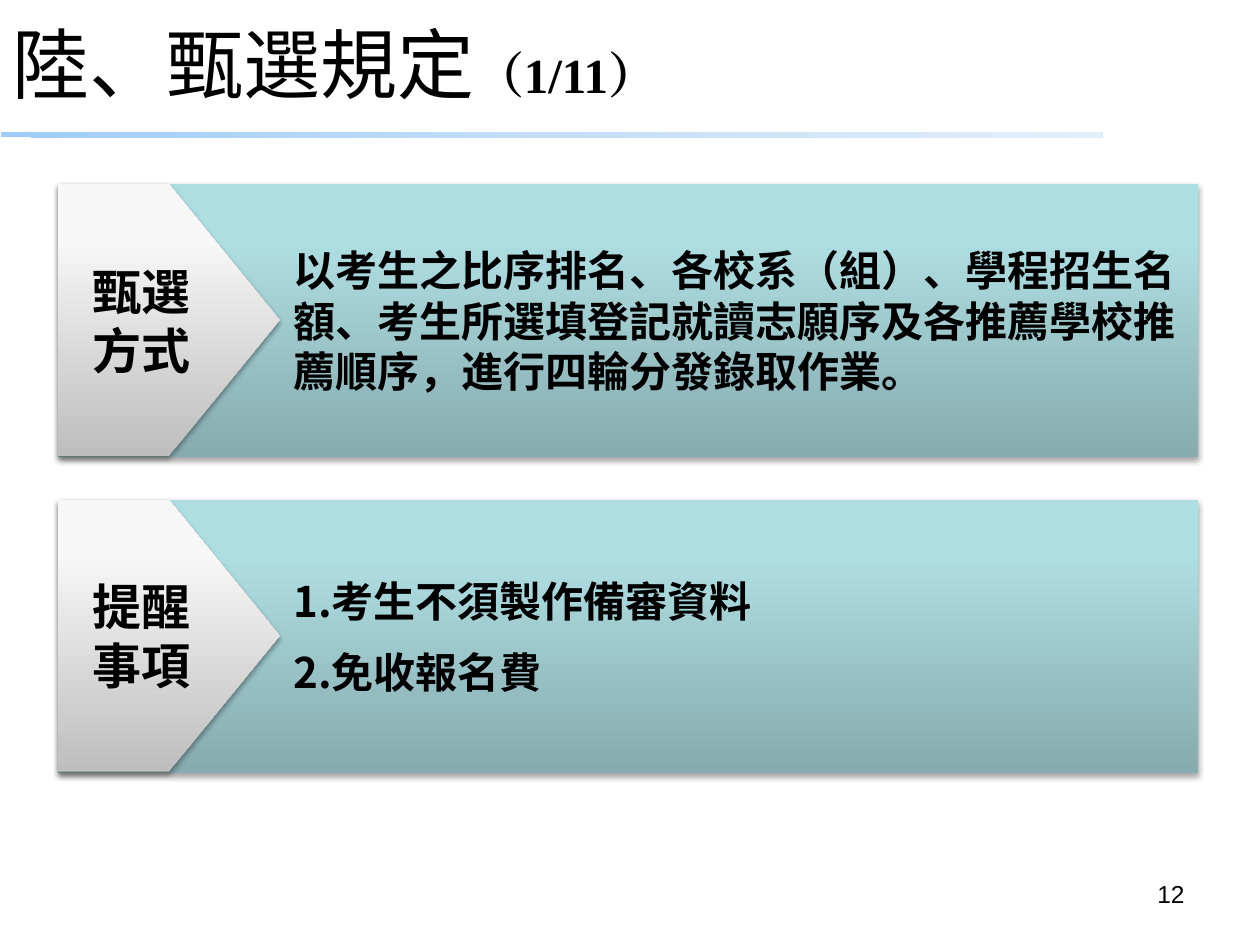
from copy import deepcopy
from dataclasses import dataclass
from lxml.etree import SubElement
from pptx import Presentation
from pptx.dml.color import RGBColor
from pptx.enum.shapes import MSO_SHAPE
from pptx.enum.text import MSO_ANCHOR, MSO_AUTO_SIZE, PP_ALIGN
from pptx.oxml.ns import qn
from pptx.util import Inches, Pt

WIDTH, HEIGHT = Inches(10), Inches(7.5)
SANS = "Noto Sans CJK SC"
TEAL = [(0, "87ABAE"), (0.8, "AFDEE2"), (1, "AFE0E4")]
GREY = [(0, "BEBEBE"), (0.8, "F7F7F7"), (1, "F8F8F8")]
BLUE = [(0, "9FCCF6"), (0.5, "C4DEF8"), (1, "E2EEFB")]


@dataclass
class Box:
    left: float
    top: float
    width: float
    height: float

    def place(self) -> tuple[int, ...]:
        sides = (WIDTH, HEIGHT, WIDTH, HEIGHT)
        shares = (self.left, self.top, self.width, self.height)
        return tuple(round(side * share / 100) for side, share in zip(sides, shares))


@dataclass
class Band:
    label: str
    lines: list[str]
    top: float
    gap: int


BANDS = [
    Band("甄選\v方式", ["以考生之比序排名、各校系（組）、學程招生名額、考生所選填登記就讀志願序及各推薦學校推薦順序，進行四輪分發錄取作業。"], 19.47, 0),
    Band("提醒事項", ["1.考生不須製作備審資料", "2.免收報名費"], 52.87, 6),
]


def tint(code: str) -> RGBColor:
    return RGBColor.from_string(code)


def apply(target, values: dict) -> None:
    for name, value in values.items():
        setattr(target, name, value)


def style(run, size: int, face: str, bold: bool = False) -> None:
    apply(run.font, {"size": Pt(size), "name": face, "bold": bold})
    run.font.color.rgb = tint("000000")
    SubElement(run._r.get_or_add_rPr(), qn("a:ea"), typeface=face)


def blend(shape, stops: list[tuple[float, str]], angle: int) -> None:
    shape.fill.gradient()
    shape.fill.gradient_angle = angle
    group = shape._element.spPr.find(".//" + qn("a:gsLst"))
    group.append(deepcopy(group[0]))
    for stop, (place, code) in zip(shape.fill.gradient_stops, stops):
        stop.position = place
        stop.color.rgb = tint(code)


def shade(shape) -> None:
    effects = shape._element.spPr.find(qn("a:effectLst"))
    outer = SubElement(effects, qn("a:outerShdw"), blurRad=str(Pt(3.1)),
                       dist=str(Pt(1.8)), dir="5400000", rotWithShape="0")
    color = SubElement(outer, qn("a:srgbClr"), val="000000")
    SubElement(color, qn("a:alpha"), val="35000")


def block(slide, kind, box: Box, stops: list[tuple[float, str]], angle: int):
    shape = slide.shapes.add_shape(kind, *box.place())
    shape.shadow.inherit = False
    shape.line.fill.background()
    blend(shape, stops, angle)
    return shape


def plate(slide, box: Box, stops: list[tuple[float, str]]):
    shape = block(slide, MSO_SHAPE.PENTAGON, box, stops, 90)
    shade(shape)
    apply(shape.text_frame, {"word_wrap": True, "vertical_anchor": MSO_ANCHOR.MIDDLE})
    return shape


def band(slide, item: Band) -> None:
    panel = plate(slide, Box(4.6, item.top, 90.5, 28.9), TEAL)
    panel.adjustments[0] = 0
    frame = panel.text_frame
    frame.text = "\n".join(item.lines)
    for rank, para in enumerate(frame.paragraphs):
        props = para._p.get_or_add_pPr()
        props.set("marL", str(Inches(1.77)))
        props.set("indent", "0")
        apply(para, {"alignment": PP_ALIGN.LEFT, "space_after": Pt(item.gap),
                     "space_before": Pt(item.gap if rank else 0)})
        style(para.runs[0], 24, SANS, True)
    arrow = plate(slide, Box(4.6, item.top, 17.6, 28.8), GREY)
    para = arrow.text_frame.paragraphs[0]
    para.text = item.label
    para.alignment = PP_ALIGN.CENTER
    for run in para.runs:
        style(run, 28, SANS, True)


def head(slide) -> None:
    title = slide.shapes.title
    names = ("left", "top", "width", "height")
    apply(title, dict(zip(names, Box(0, 2, 90, 9.2).place())))
    apply(title.text_frame, {"word_wrap": True, "auto_size": MSO_AUTO_SIZE.NONE,
                             "vertical_anchor": MSO_ANCHOR.MIDDLE})
    para = title.text_frame.paragraphs[0]
    para.alignment = PP_ALIGN.LEFT
    for text, size, face, bold in (("陸、甄選規定", 44, "Noto Sans CJK JP", False),
                                   ("（1/11）", 28, "Times New Roman", True)):
        run = para.add_run()
        run.text = text
        style(run, size, face, bold)
    block(slide, MSO_SHAPE.RECTANGLE, Box(0.1, 14, 87.4, 0.53), BLUE, 45)


def number(slide, text: str) -> None:
    frame = slide.shapes.add_textbox(*Box(71.7, 92.4, 23.3, 6.93).place()).text_frame
    frame.word_wrap = True
    para = frame.paragraphs[0]
    para.text = text
    para.alignment = PP_ALIGN.RIGHT
    style(para.runs[0], 14, "Arial")


def main() -> None:
    """Build the selection rules slide and save it."""
    deck = Presentation()
    apply(deck, {"slide_width": WIDTH, "slide_height": HEIGHT})
    slide = deck.slides.add_slide(deck.slide_layouts[5])
    head(slide)
    number(slide, "12")
    for item in BANDS:
        band(slide, item)
    deck.save("out.pptx")


if __name__ == "__main__":
    main()
